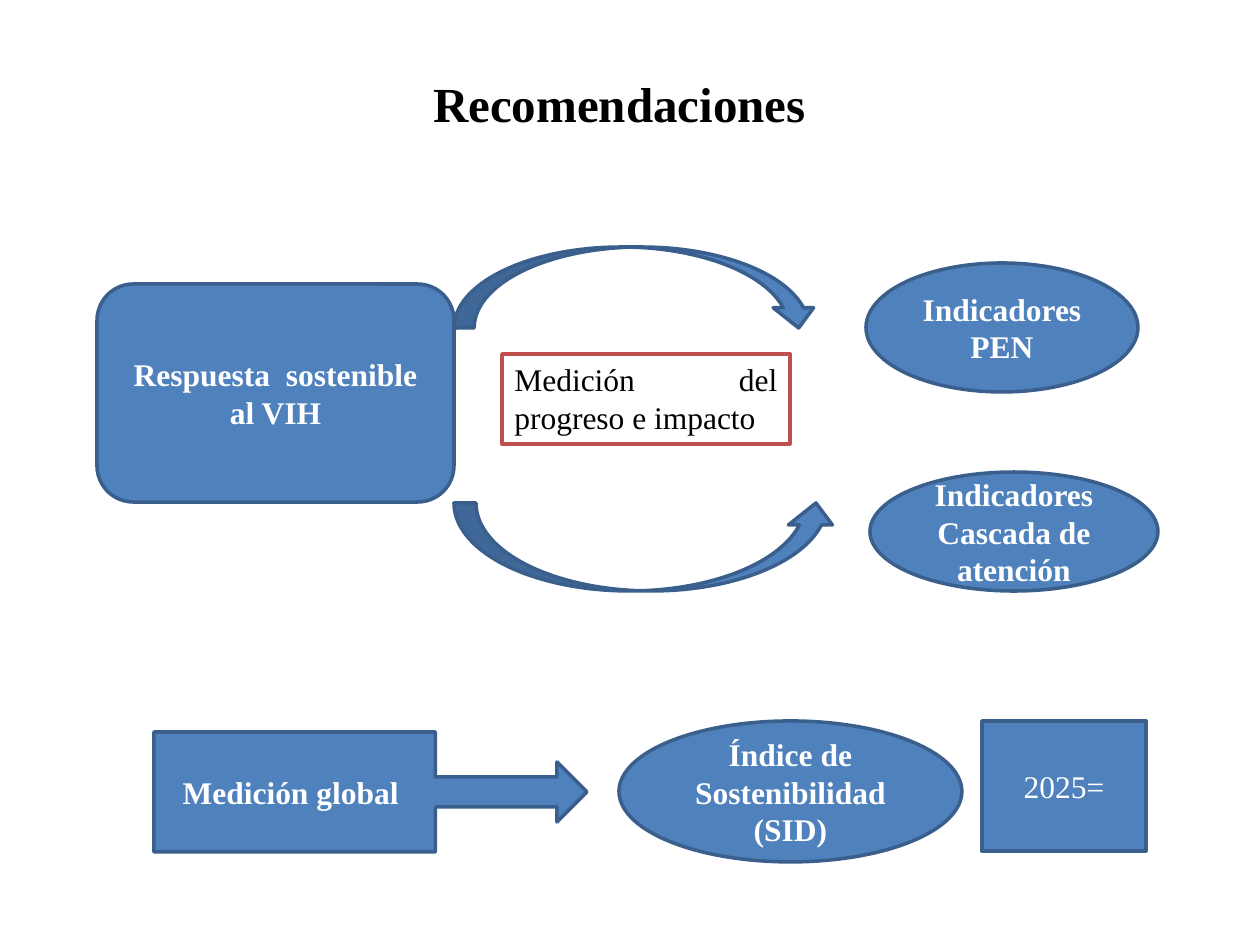
import pptx
import pptx.util
from pptx.dml.color import RGBColor
from pptx.enum.shapes import MSO_SHAPE
from pptx.enum.text import MSO_ANCHOR, PP_ALIGN

EMU_PER_PX = 914400 / 126
COLOURS = {
    "blue": "4F81BD",
    "navy": "3A5F8C",
    "red": "C0504D",
    "white": "FFFFFF",
    "black": "000000",
}


def px(length):
    return pptx.util.Emu(round(length * EMU_PER_PX))


def colour(name):
    return RGBColor.from_string(COLOURS[name])


class SlideBuilder:
    font = "Times New Roman"

    def __init__(self, page):
        self.page = page

    def set_text(self, shape, text, ink, size=18, bold=True,
                 align=PP_ALIGN.CENTER, anchor=MSO_ANCHOR.MIDDLE):
        frame = shape.text_frame
        frame.word_wrap = True
        frame.vertical_anchor = anchor
        para = frame.paragraphs[0]
        para.text = text
        para.alignment = align
        para.font.name = self.font
        para.font.size = pptx.util.Pt(size)
        para.font.bold = bold
        para.font.color.rgb = colour(ink)

    def shape(self, kind, place, fill="blue", line="navy"):
        shape = self.page.shapes.add_shape(kind, *map(px, place))
        shape.shadow.inherit = False
        shape.fill.solid()
        shape.fill.fore_color.rgb = colour(fill)
        shape.line.color.rgb = colour(line)
        shape.line.width = pptx.util.Pt(2)
        return shape

    def node(self, kind, place, text, bold=True):
        self.set_text(self.shape(kind, place), text, "white", bold=bold)

    def note(self, place, text):
        """Add a white, red-edged box with justified text."""
        box = self.shape(MSO_SHAPE.RECTANGLE, place, "white", "red")
        self.set_text(box, text, "black", bold=False,
                      align=PP_ALIGN.JUSTIFY, anchor=MSO_ANCHOR.TOP)

    def title(self, place, text):
        box = self.page.shapes.add_textbox(*map(px, place))
        self.set_text(box, text, "black", size=28, anchor=MSO_ANCHOR.TOP)


def main():
    deck = pptx.Presentation()
    deck.slide_width, deck.slide_height = px(1260), px(945)
    slide = SlideBuilder(deck.slides.add_slide(deck.slide_layouts[6]))

    slide.node(MSO_SHAPE.OVAL, (866, 263, 272, 129), "Indicadores PEN")
    slide.node(MSO_SHAPE.ROUNDED_RECTANGLE, (97, 284, 357, 218),
               "Respuesta  sostenible al VIH")
    slide.node(MSO_SHAPE.OVAL, (870, 472, 288, 119),
               "Indicadores Cascada de atención")
    slide.node(MSO_SHAPE.OVAL, (619, 721, 343, 141),
               "Índice de Sostenibilidad (SID)")
    slide.shape(MSO_SHAPE.CURVED_DOWN_ARROW, (454, 247, 365, 81))
    slide.shape(MSO_SHAPE.CURVED_UP_ARROW, (454, 503, 384, 88))
    slide.note((502, 354, 288, 90), "Medición del progreso e impacto")
    slide.node(MSO_SHAPE.RIGHT_ARROW_CALLOUT, (154, 732, 433, 120),
               "Medición global ")
    slide.node(MSO_SHAPE.RECTANGLE, (982, 721, 164, 130), "2025=", bold=False)
    slide.title((178, 67, 883, 72), "Recomendaciones")

    deck.save("out.pptx")


if __name__ == "__main__":
    main()
